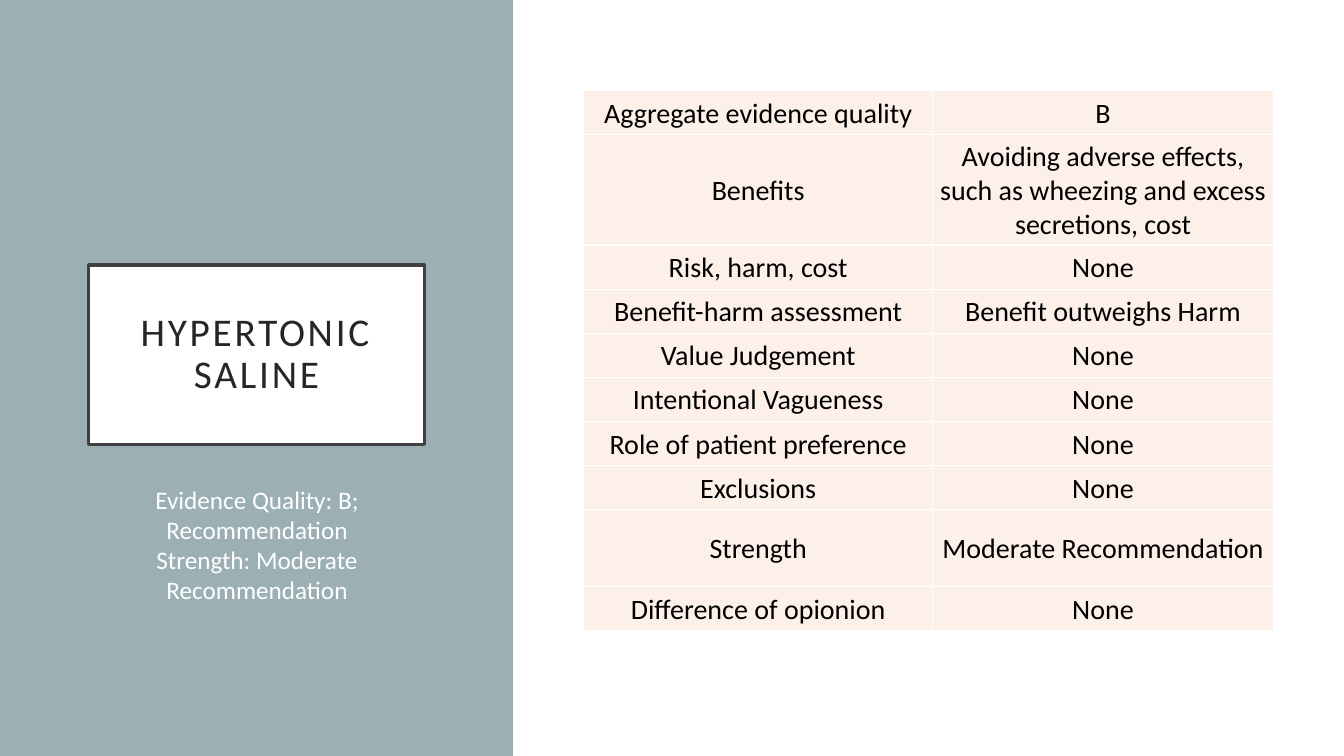
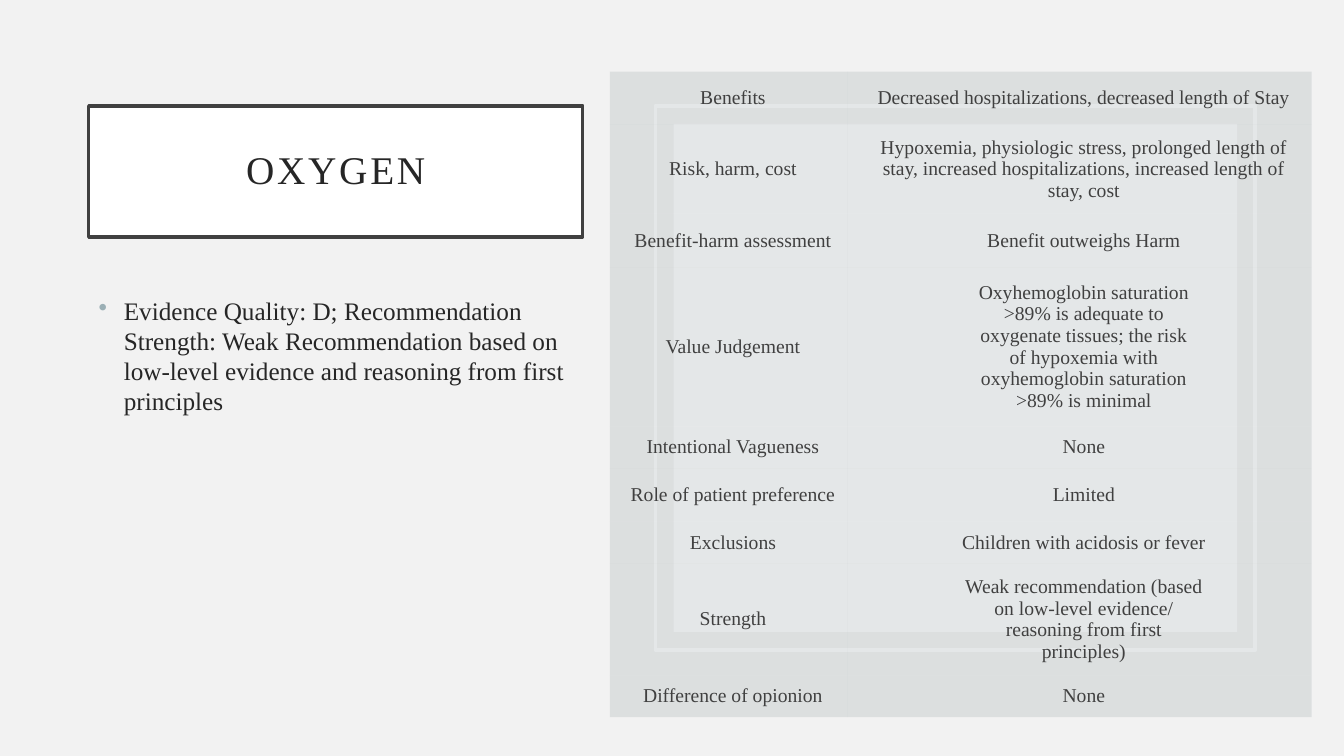
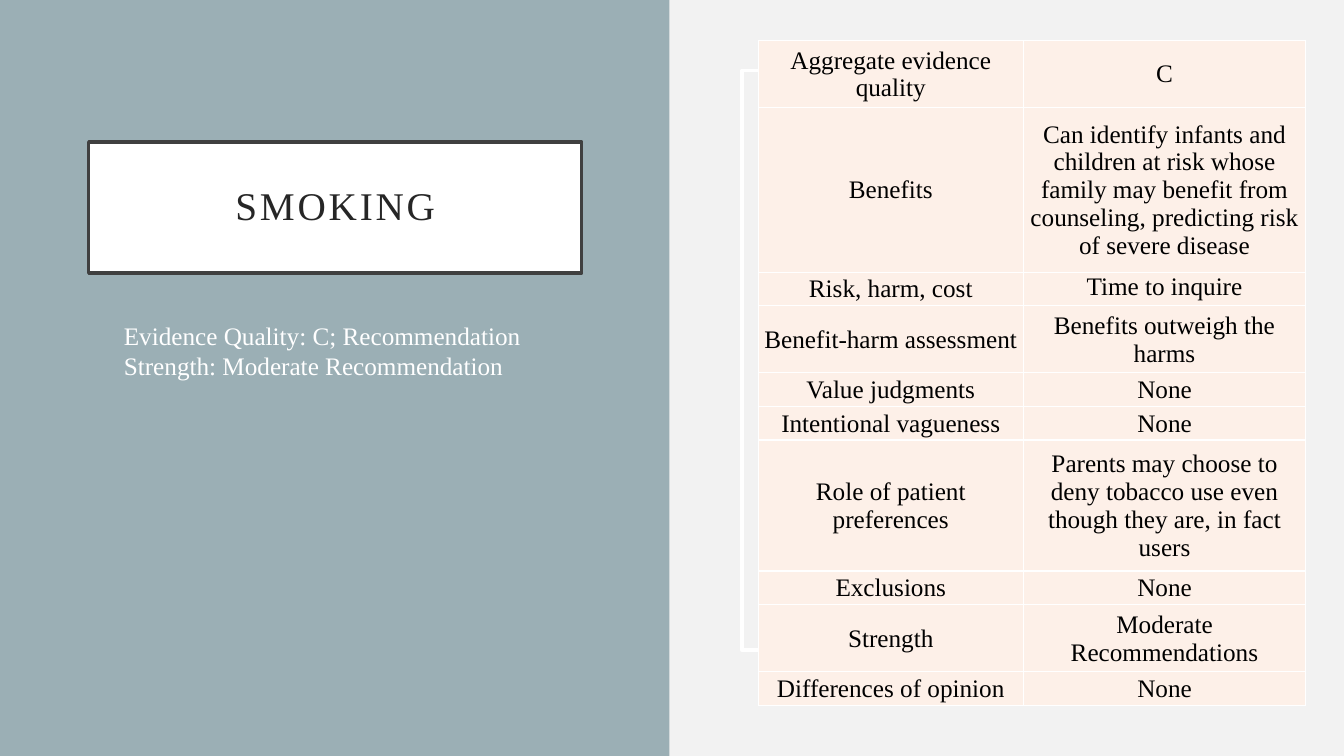
from collections import namedtuple
from copy import deepcopy

from lxml import etree
from pptx import Presentation
from pptx.dml.color import RGBColor
from pptx.enum.shapes import MSO_SHAPE
from pptx.enum.text import MSO_ANCHOR, PP_ALIGN
from pptx.oxml.ns import qn
from pptx.util import Inches, Pt

RECTANGLE = MSO_SHAPE.RECTANGLE
TOP, MIDDLE = MSO_ANCHOR.TOP, MSO_ANCHOR.MIDDLE
LEFT, CENTER = PP_ALIGN.LEFT, PP_ALIGN.CENTER

# Shared look
WIDTH, HEIGHT = 13.33, 7.5
MARGIN = 0.88
WHITE, PALE, TEAL, PEACH, GREY = "FFFFFF", "F2F2F2", "9BAFB5", "FDF0E8", "B4BCBE"
BLACK, INK, CHARCOAL = "000000", "262626", "404040"
SANS, SERIF = "Calibri", "Times New Roman"
OUTLINE = 2.5
PANEL_INSET = 0.18
NO_STYLE = "{2D5ABB26-0587-4C30-8999-92F81FD0307C}"
SIDES = ("left", "top", "right", "bottom")

Box = namedtuple("Box", "left top width height")

# Table wording
HYPERTONIC_ROWS = [
    ("Aggregate evidence quality", "B"),
    ("Benefits", "Avoiding adverse effects, such as wheezing and excess secretions, cost"),
    ("Risk, harm, cost", "None"),
    ("Benefit-harm assessment", "Benefit outweighs Harm"),
    ("Value Judgement", "None"),
    ("Intentional Vagueness", "None"),
    ("Role of patient preference", "None"),
    ("Exclusions", "None"),
    ("Strength", "Moderate Recommendation"),
    ("Difference of opionion", "None"),
]
OXYGEN_ROWS = [
    ("Benefits", "Decreased hospitalizations, decreased length of Stay"),
    ("Risk, harm, cost", "Hypoxemia, physiologic stress, prolonged length of stay, "
     "increased hospitalizations, increased length of stay, cost"),
    ("Benefit-harm assessment", "Benefit outweighs Harm"),
    ("Value Judgement", "Oxyhemoglobin saturation\n>89% is adequate to\n"
     "oxygenate tissues; the risk\nof hypoxemia with\n"
     "oxyhemoglobin saturation\n>89% is minimal"),
    ("Intentional Vagueness", "None"),
    ("Role of patient preference", "Limited"),
    ("Exclusions", "Children with acidosis or fever"),
    ("Strength", "Weak recommendation (based\non low-level evidence/\n"
     "reasoning from first\nprinciples)"),
    ("Difference of opionion", "None"),
]
SMOKING_ROWS = [
    ("Aggregate evidence quality", "C"),
    ("Benefits", "Can identify infants and children at risk whose family may benefit "
     "from counseling, predicting risk of severe disease"),
    ("Risk, harm, cost", "Time to inquire"),
    ("Benefit-harm assessment", "Benefits outweigh the harms"),
    ("Value judgments", "None"),
    ("Intentional vagueness", "None"),
    ("Role of patient preferences", "Parents may choose to deny tobacco use even "
     "though they are, in fact users"),
    ("Exclusions", "None"),
    ("Strength", "Moderate Recommendations"),
    ("Differences of opinion", "None"),
]


def color(value):
    return RGBColor.from_string(value)


def inches(box):
    return [Inches(length) for length in box]


def set_all(target, values):
    for name, value in values.items():
        setattr(target, name, value)


def margins(values):
    return {f"margin_{side}": Inches(value) for side, value in zip(SIDES, values)}


def write(text_frame, text, font, size, ink, **paragraph_format):
    """Fill the first paragraph; line breaks take the format of the text."""
    paragraph = text_frame.paragraphs[0]
    paragraph.text = text
    set_all(paragraph, paragraph_format)
    for run in paragraph.runs:
        set_all(run.font, {"name": font, "size": Pt(size)})
        run.font.color.rgb = color(ink)
    for line_break in paragraph._p.findall(qn("a:br")):
        line_break.insert(0, deepcopy(paragraph.runs[0]._r.rPr))
    return paragraph


def add_rectangle(slide, box, fill=None, line=None):
    shape = slide.shapes.add_shape(RECTANGLE, *inches(box))
    shape.shadow.inherit = False
    if fill:
        shape.fill.solid()
        shape.fill.fore_color.rgb = color(fill)
    else:
        shape.fill.background()
    if line:
        shape.line.color.rgb = color(line)
        shape.line.width = Pt(OUTLINE)
    else:
        shape.line.fill.background()
    return shape


def add_title(slide, box, text, font, side_inset=0.2):
    frame = add_rectangle(slide, box, WHITE, CHARCOAL).text_frame
    set_all(frame, {"word_wrap": True, "vertical_anchor": MIDDLE,
                    **margins((side_inset, 0.2, side_inset, 0.2))})
    paragraph = write(frame, text, font, 28, INK, alignment=CENTER, line_spacing=0.9)
    paragraph.runs[0]._r.rPr.set("spc", "200")


def add_summary(slide, box, text, font, ink, alignment=LEFT, indent=0.0, bullet=False):
    frame = slide.shapes.add_textbox(*inches(box)).text_frame
    frame.word_wrap = True
    paragraph = write(frame, text, font, 18, ink, alignment=alignment,
                      line_spacing=Pt(21.4), space_before=Pt(10))
    properties = paragraph._p.get_or_add_pPr()
    properties.set("marL", str(Inches(indent)))
    if bullet:
        properties.set("indent", str(-Inches(indent)))
        bullet_color = etree.SubElement(properties, qn("a:buClr"))
        etree.SubElement(bullet_color, qn("a:srgbClr"), val=TEAL)
        etree.SubElement(properties, qn("a:buChar"), char="•")


def add_framed_panel(slide, box):
    """White outline with a white panel set inside it."""
    add_rectangle(slide, box, line=WHITE)
    add_rectangle(slide, Box(box.left + PANEL_INSET, box.top + PANEL_INSET,
                             box.width - 2 * PANEL_INSET, box.height - 2 * PANEL_INSET), WHITE)


def add_borders(cell, line):
    properties = cell._tc.get_or_add_tcPr()
    for position, tag in enumerate(("a:lnL", "a:lnR", "a:lnT", "a:lnB")):
        border = etree.Element(qn(tag), w=str(Pt(1)))
        fill = etree.SubElement(border, qn("a:solidFill"))
        etree.SubElement(fill, qn("a:srgbClr"), val=line)
        properties.insert(position, border)


def add_evidence_table(slide, box, rows, column_shares, row_shares, font, size, ink,
                       fill, insets, opacity=None, border=None, top_cells=()):
    graphic = slide.shapes.add_table(len(rows), 2, *inches(box))
    table = graphic.table
    set_all(table, {"first_row": False, "horz_banding": False})
    table._tbl.tblPr.find(qn("a:tableStyleId")).text = NO_STYLE
    for column, share in zip(table.columns, column_shares):
        column.width = Inches(box.width * share / sum(column_shares))
    for row, share in zip(table.rows, row_shares):
        row.height = Inches(box.height * share / sum(row_shares))
    for row, texts in zip(table.rows, rows):
        for cell, text in zip(row.cells, texts):
            anchor = TOP if text in top_cells else MIDDLE
            set_all(cell, {"vertical_anchor": anchor, **margins(insets)})
            write(cell.text_frame, text, font, size, ink, alignment=CENTER)
            cell.fill.solid()
            cell.fill.fore_color.rgb = color(fill)
            if opacity:
                tint = cell._tc.tcPr.find(".//" + qn("a:srgbClr"))
                etree.SubElement(tint, qn("a:alpha"), val=str(opacity * 1000))
            if border:
                add_borders(cell, border)


def add_slide(presentation, background, band_width=0):
    slide = presentation.slides.add_slide(presentation.slide_layouts[6])
    slide.background.fill.solid()
    slide.background.fill.fore_color.rgb = color(background)
    if band_width:
        add_rectangle(slide, Box(0, 0, band_width, HEIGHT), TEAL)
    return slide


def hypertonic_slide(presentation):
    slide = add_slide(presentation, WHITE, 5.09)
    add_title(slide, Box(MARGIN, 2.63, 3.33, 1.78), "HYPERTONIC SALINE", SANS, 0.3)
    add_summary(slide, Box(1.23, 4.76, 2.64, 1.36),
                "Evidence Quality: B; Recommendation Strength: Moderate Recommendation",
                SANS, WHITE, CENTER)
    add_evidence_table(slide, Box(5.79, 0.9, 6.84, 5.36), HYPERTONIC_ROWS, (3.46, 3.38),
                       (4, 10, 4, 4, 4, 4, 4, 4, 7, 4), SANS, 20, BLACK, PEACH,
                       (0.02, 0.02, 0.02, 0), border=WHITE)


def oxygen_slide(presentation):
    slide = add_slide(presentation, PALE)
    add_title(slide, Box(MARGIN, 1.05, 4.9, 1.3), "OXYGEN", SERIF)
    add_summary(slide, Box(MARGIN, 2.88, 4.91, 3.57),
                "Evidence Quality: D; Recommendation Strength: Weak Recommendation based on "
                "low-level evidence and reasoning from first principles",
                SERIF, INK, indent=0.25, bullet=True)
    add_framed_panel(slide, Box(6.5, 1.05, 5.95, 5.4))
    add_evidence_table(slide, Box(6.05, 0.71, 6.96, 6.1), OXYGEN_ROWS, (2.36, 4.6),
                       (0.53, 0.83, 0.53, 1.47, 0.39, 0.53, 0.39, 1.04, 0.39), SERIF, 14,
                       CHARCOAL, GREY, (0.17, 0.09, 0.09, 0.09), opacity=35)


def smoking_slide(presentation):
    slide = add_slide(presentation, PALE, 6.64)
    add_title(slide, Box(MARGIN, 1.41, 4.89, 1.3), "SMOKING", SERIF)
    add_summary(slide, Box(MARGIN, 3.13, 4.89, 3.33),
                "Evidence Quality: C; Recommendation Strength: Moderate Recommendation",
                SERIF, WHITE, indent=0.25)
    add_framed_panel(slide, Box(7.36, 0.7, 5.27, 5.75))
    add_evidence_table(slide, Box(7.52, 0.4, 5.43, 6.6), SMOKING_ROWS, (2.63, 2.8),
                       (2, 4.9, 1, 2, 1, 1, 3.9, 1, 2, 1), SERIF, 18, BLACK, PEACH,
                       (0.01, 0.01, 0.01, 0), border=WHITE, top_cells=("Time to inquire",))


def main():
    presentation = Presentation()
    set_all(presentation, {"slide_width": Inches(WIDTH), "slide_height": Inches(HEIGHT)})
    for build in (hypertonic_slide, oxygen_slide, smoking_slide):
        build(presentation)
    presentation.save("out.pptx")


if __name__ == "__main__":
    main()
